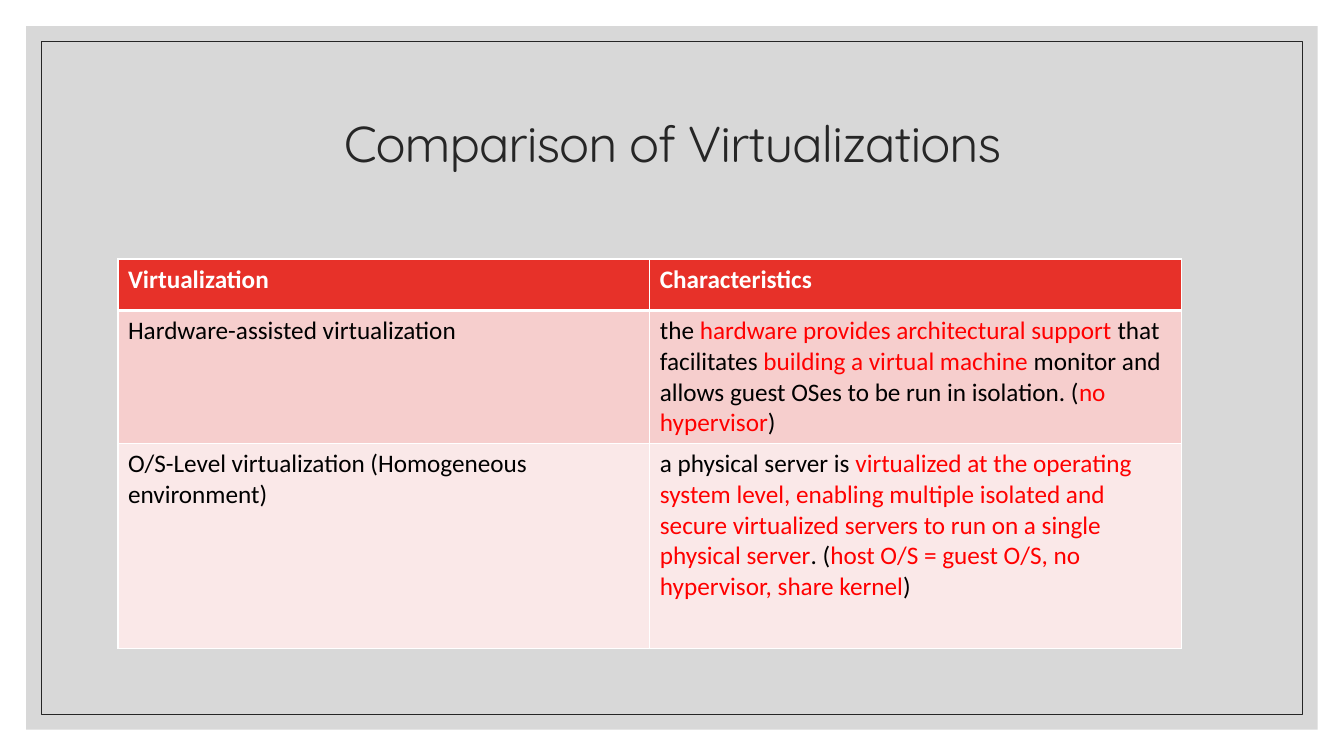
import pptx
import pptx.util
import pptx.dml.color
import pptx.enum.shapes
import pptx.enum.text
import pptx.oxml
import pptx.oxml.ns
from lxml import etree

RGBColor = pptx.dml.color.RGBColor
Inches = pptx.util.Inches
Pt = pptx.util.Pt
qn = pptx.oxml.ns.qn

WHITE = RGBColor(0xFF, 0xFF, 0xFF)
BLACK = RGBColor(0, 0, 0)
RED = RGBColor(0xFF, 0, 0)
INK = RGBColor(0x26, 0x26, 0x26)
PANEL = RGBColor(0xBF, 0xBF, 0xBF)
HEADER = RGBColor(0xE7, 0x31, 0x29)
BANDS = (RGBColor(0xF6, 0xCE, 0xCD), RGBColor(0xFA, 0xE8, 0xE8))

TITLE = "Comparison of Virtualizations"
# Each cell is a list of pieces: plain, highlighted, plain, highlighted, ...
ROWS = [
    (["Virtualization"], ["Characteristics"]),
    (["Hardware-assisted virtualization"],
     ["the ", "hardware provides architectural support ",
      "that facilitates ", "building a virtual machine ",
      "monitor and allows guest OSes to be run in isolation. (",
      "no hypervisor", ")"]),
    (["O/S-Level virtualization (Homogeneous environment)"],
     ["a physical server is ",
      "virtualized at the operating system level, enabling multiple isolated "
      "and secure virtualized servers to run on a single physical server",
      ". (", "host O/S = guest O/S, no hypervisor, share kernel", ")"]),
]

SLIDE_WIDTH, SLIDE_HEIGHT = 13.33, 7.5
PANEL_MARGIN, FRAME_MARGIN = 0.26, 0.41
LEFT = 1.17
TITLE_TOP, TITLE_WIDTH, TITLE_HEIGHT = 0.7, 11, 1.5
TABLE_TOP, TABLE_WIDTH = 2.57, 10.55
ROW_HEIGHTS = (0.51, 1.27, 2.03)


def add_inset_rectangle(page, margin):
    box = page.shapes.add_shape(
        pptx.enum.shapes.MSO_SHAPE.RECTANGLE, Inches(margin), Inches(margin),
        Inches(SLIDE_WIDTH - 2 * margin), Inches(SLIDE_HEIGHT - 2 * margin))
    box.shadow.inherit = False
    return box


def add_text(para, text, *, font, size, color, bold=False):
    span = para.add_run()
    span.text = text
    span.font.name = font
    span.font.size = Pt(size)
    span.font.color.rgb = color
    span.font.bold = bold
    return span


def set_borders(cell, bottom=1, top=1):
    """Draw white borders, with widths in points; they must precede the fill."""
    properties = cell._tc.get_or_add_tcPr()
    widths = {"lnL": 1, "lnR": 1, "lnT": top, "lnB": bottom}
    for position, (side, width) in enumerate(widths.items()):
        line = etree.Element(qn(f"a:{side}"), w=str(Pt(width)))
        fill = etree.SubElement(line, qn("a:solidFill"))
        etree.SubElement(fill, qn("a:srgbClr"), val=str(WHITE))
        properties.insert(position, line)


def add_background(page):
    panel = add_inset_rectangle(page, PANEL_MARGIN)
    panel.fill.solid()
    panel.fill.fore_color.rgb = PANEL
    panel.line.fill.background()
    color = panel.element.spPr.find(f"{qn('a:solidFill')}/{qn('a:srgbClr')}")
    etree.SubElement(color, qn("a:alpha"), val="60000")

    frame = add_inset_rectangle(page, FRAME_MARGIN)
    frame.fill.background()
    frame.line.color.rgb = INK
    frame.line.width = Pt(0.5)


def format_title(page):
    title = page.shapes.title
    title.left, title.top = Inches(LEFT), Inches(TITLE_TOP)
    title.width, title.height = Inches(TITLE_WIDTH), Inches(TITLE_HEIGHT)
    frame = title.text_frame
    frame.word_wrap = True
    frame.auto_size = pptx.enum.text.MSO_AUTO_SIZE.NONE
    frame.vertical_anchor = pptx.enum.text.MSO_ANCHOR.MIDDLE
    para = frame.paragraphs[0]
    para.alignment = pptx.enum.text.PP_ALIGN.CENTER
    para.line_spacing = 0.9
    span = add_text(para, TITLE, font="Quicksand", size=36, color=INK)
    span.font._element.set("spc", "-70")
    # Bring the title in front of the panel.
    title.element.getparent().append(title.element)


def add_comparison(page):
    columns = len(ROWS[0])
    table = page.shapes.add_table(
        len(ROWS), columns, Inches(LEFT), Inches(TABLE_TOP),
        Inches(TABLE_WIDTH), Inches(sum(ROW_HEIGHTS))).table
    for column in table.columns:
        column.width = Inches(TABLE_WIDTH / columns)
    for r, (height, contents) in enumerate(zip(ROW_HEIGHTS, ROWS)):
        table.rows[r].height = Inches(height)
        is_header = r == 0
        for c, pieces in enumerate(contents):
            cell = table.cell(r, c)
            cell.fill.solid()
            cell.fill.fore_color.rgb = HEADER if is_header else BANDS[r - 1]
            set_borders(cell, bottom=3 if is_header else 1, top=3 if r == 1 else 1)
            colors = (WHITE if is_header else BLACK, RED)
            for i, piece in enumerate(pieces):
                add_text(cell.text_frame.paragraphs[0], piece, font="Calibri",
                         size=18, color=colors[i % 2], bold=is_header)


def main():
    deck = pptx.Presentation()
    deck.slide_width, deck.slide_height = Inches(SLIDE_WIDTH), Inches(SLIDE_HEIGHT)
    page = deck.slides.add_slide(deck.slide_layouts.get_by_name("Title Only"))
    add_background(page)
    format_title(page)
    add_comparison(page)
    deck.save("out.pptx")


if __name__ == "__main__":
    main()
